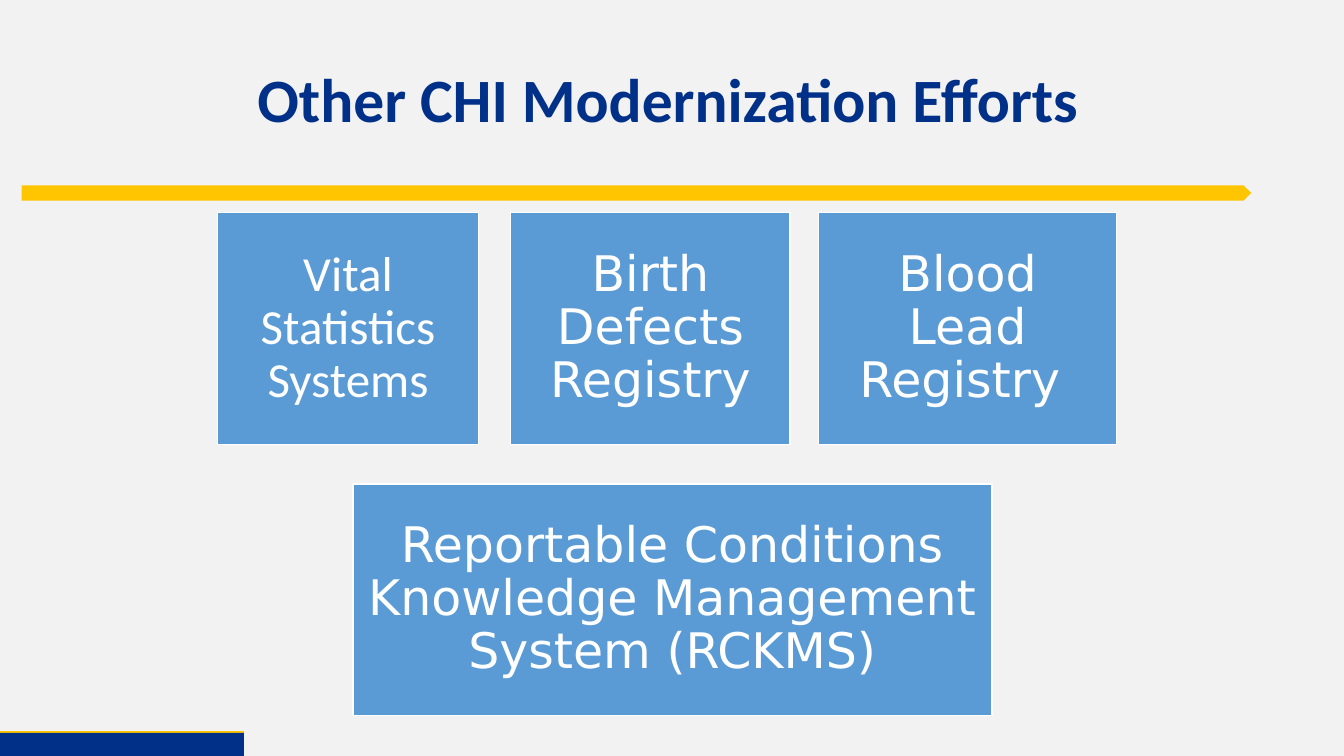
from dataclasses import dataclass
from lxml import etree
from pptx import Presentation
from pptx.dml.color import RGBColor
from pptx.enum.shapes import MSO_CONNECTOR, MSO_SHAPE
from pptx.enum.text import MSO_ANCHOR, PP_ALIGN
from pptx.oxml.ns import qn
from pptx.util import Inches, Pt

RECT = MSO_SHAPE.RECTANGLE
ARROW = MSO_SHAPE.PENTAGON
LINE = MSO_CONNECTOR.STRAIGHT
MIDDLE = MSO_ANCHOR.MIDDLE
CENTER = PP_ALIGN.CENTER
LEFT = PP_ALIGN.LEFT

WIDE, HIGH = Inches(13.333), Inches(7.5)


@dataclass(frozen=True)
class Theme:
    back: str = "F2F2F2"
    navy: str = "003087"
    gold: str = "FFC600"
    blue: str = "5B9BD5"
    white: str = "FFFFFF"
    sans: str = "Calibri"
    alt: str = "DejaVu Sans"
    head: int = 44
    body: int = 35
    lead: float = 0.9


THEME = Theme()
TOP, LOW, TALL = 28.13, 64, 30.67
CARDS = [
    ("Vital Statistics Systems", 16.2, TOP, 19.4, THEME.sans),
    ("Birth Defects Registry", 38, TOP, 20.8, THEME.alt),
    ("Blood Lead Registry ", 60.9, TOP, 22.2, THEME.alt),
    ("Reportable Conditions Knowledge Management System (RCKMS)",
     26.25, LOW, 47.56, THEME.alt),
]


def color(code):
    return RGBColor.from_string(code)


def area(x, y, w, h):
    return [int(side * share / 100) for side, share in
            zip((WIDE, HIGH, WIDE, HIGH), (x, y, w, h))]


def block(slide, kind, box, fill):
    shape = slide.shapes.add_shape(kind, *area(*box))
    shape.shadow.inherit = False
    shape.fill.solid()
    shape.fill.fore_color.rgb = color(fill)
    shape.line.fill.background()
    return shape


def write(shape, text, face, size, tint, align, bold=False):
    frame = shape.text_frame
    frame.text = text
    frame.word_wrap = True
    frame.vertical_anchor = MIDDLE
    line = frame.paragraphs[0]
    line.alignment = align
    line.line_spacing = THEME.lead
    font = line.runs[0].font
    font.name, font.size, font.bold = face, Pt(size), bold
    font.color.rgb = color(tint)
    return frame


def card(slide, text, x, y, w, face):
    shape = block(slide, RECT, (x, y, w, TALL), THEME.blue)
    shape.line.color.rgb = color(THEME.white)
    shape.line.width = Pt(1)
    frame = write(shape, text, face, THEME.body, THEME.white, CENTER)
    frame.margin_left = frame.margin_right = Inches(0.15)
    frame.margin_top = frame.margin_bottom = Inches(0.15)


def rule(slide, x, y, w):
    left, top, width, _ = area(x, y, w, 0)
    line = slide.shapes.add_connector(LINE, left, top, left + width, top)
    line.line.color.rgb = color(THEME.gold)
    line.line.width = Pt(3)
    etree.SubElement(line._element.spPr, qn("a:effectLst"))


def title(slide, text):
    shape = slide.shapes.title
    shape.left, shape.top, shape.width, shape.height = area(18.4, 3.87, 81.6, 19.33)
    write(shape, text, THEME.sans, THEME.head, THEME.navy, LEFT, True)


def main():
    deck = Presentation()
    deck.slide_width, deck.slide_height = WIDE, HIGH
    slide = deck.slides.add_slide(deck.slide_layouts[5])
    slide.background.fill.solid()
    slide.background.fill.fore_color.rgb = color(THEME.back)
    block(slide, ARROW, (1.6, 24.53, 91.5, 2), THEME.gold)
    rule(slide, 0, 96.93, 18.15)
    block(slide, RECT, (0, 96.93, 18.15, 3.07), THEME.navy)
    title(slide, "Other CHI Modernization Efforts")
    for item in CARDS:
        card(slide, *item)
    deck.save("out.pptx")


if __name__ == "__main__":
    main()
